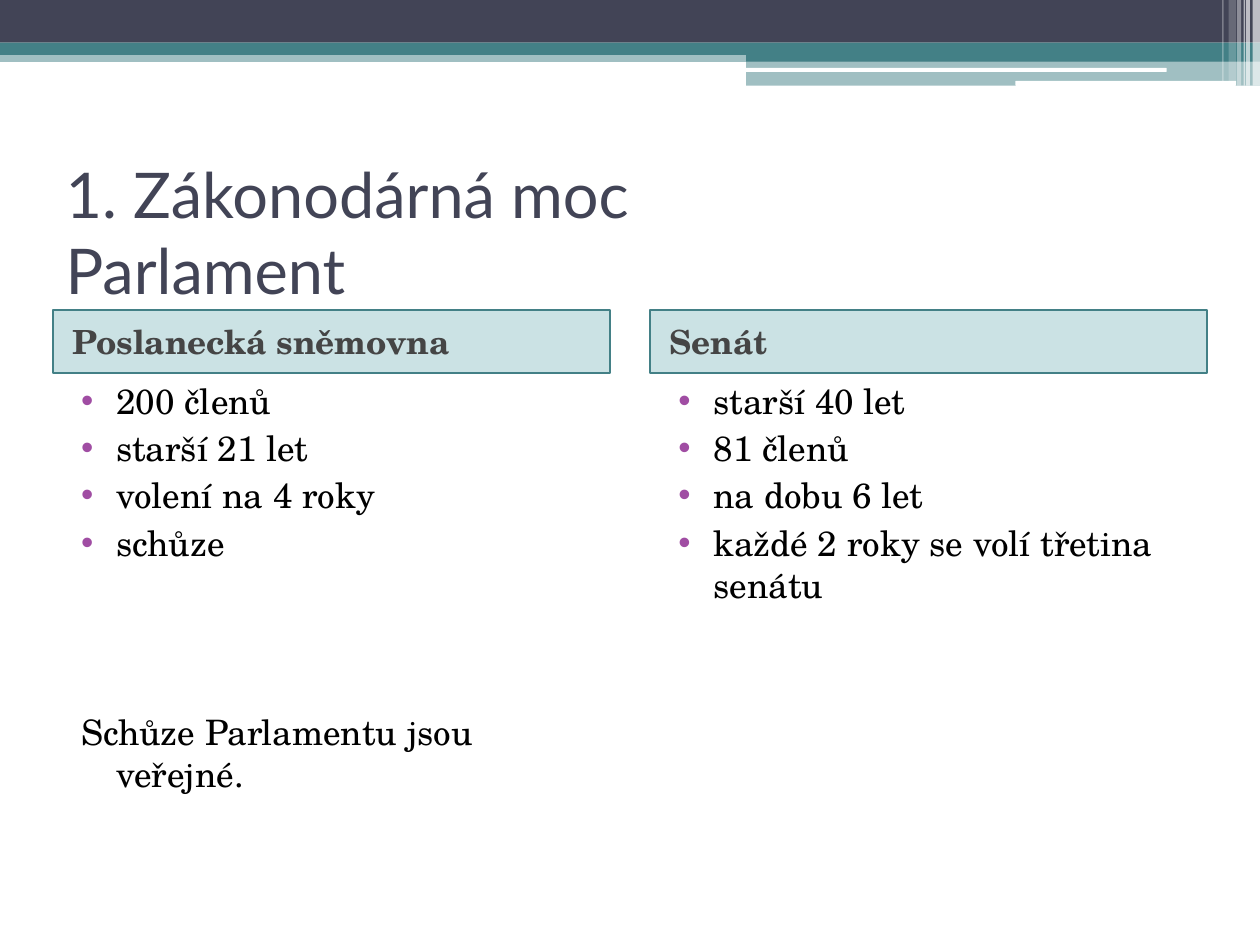
from lxml.etree import SubElement
from pptx import Presentation
from pptx.dml.color import RGBColor
from pptx.enum.shapes import MSO_SHAPE as Shape
from pptx.enum.text import MSO_ANCHOR as Anchor, MSO_AUTO_SIZE as AutoSize, PP_ALIGN as Align
from pptx.oxml.ns import qn
from pptx.util import Cm, Pt

DARK, TEAL, WHITE = "424456", "438086", "FFFFFF"
SERIF = "TeX Gyre Schola"
SLIDE_W = 25.4
COL_W, HEAD_TOP, HEAD_H, LIST_H = 11.23, 6.25, 1.27, 10.8

# left, top, width, height, colour, opacity in percent
BANDS = [
    (0, 1.02, SLIDE_W, 0.23, TEAL, 50),
    (0, 0, SLIDE_W, 0.86, DARK, 100),
    (0, 0.86, SLIDE_W, 0.25, TEAL, 100),
    (15.04, 0.99, 10.36, 0.25, TEAL, 100),
    (15.04, 1.22, 10.36, 0.51, TEAL, 50),
]
ROUNDED = [
    (15.01, 1.37, 8.51, 0.08, WHITE, 100),
    (20.47, 1.63, 4.45, 0.1, WHITE, 100),
]
# left, width, height, opacity of the upright white stripes
STRIPES = [
    (25.25, 0.15, 1.73, 65),
    (25.12, 0.08, 1.73, 65),
    (25.07, 0.03, 1.73, 60),
    (24.94, 0.08, 1.73, 40),
    (24.77, 0.15, 1.63, 20),
    (24.64, 0.03, 1.63, 30),
]
# left edge, heading, bulleted items, closing remark
COLUMNS = [
    (1.07, "Poslanecká sněmovna",
     ["200 členů", "starší 21 let", "volení na 4 roky", "schůze"],
     "Schůze Parlamentu jsou veřejné."),
    (13.11, "Senát",
     ["starší 40 let", "81 členů", "na dobu 6 let",
      "každé 2 roky se volí třetina senátu"], None),
]


def rgb(color):
    return RGBColor.from_string(color)


def set_fill(sp, color, opacity=100):
    sp.fill.solid()
    sp.fill.fore_color.rgb = rgb(color)
    if opacity < 100:
        clr = sp.fill._xPr.find(".//" + qn("a:srgbClr"))
        SubElement(clr, qn("a:alpha"), val=str(opacity * 1000))


def add_bar(slide, left, top, width, height, color, opacity, kind=Shape.RECTANGLE):
    sp = slide.shapes.add_shape(kind, Cm(left), Cm(top), Cm(width), Cm(height))
    sp.shadow.inherit = False
    sp.line.fill.background()
    set_fill(sp, color, opacity)


def place(sp, left, top, width, height, anchor):
    """Move a placeholder and return its text frame."""
    sp.left, sp.top, sp.width, sp.height = map(Cm, (left, top, width, height))
    tf = sp.text_frame
    tf.word_wrap = True
    tf.auto_size = AutoSize.NONE
    tf.vertical_anchor = anchor
    return tf


def write(p, text, size, color, font=SERIF, bold=False, before=3,
          margin=0, indent=0, bullet=None):
    p.text = text
    p.alignment = Align.LEFT
    p.space_before = Pt(before)
    for r in p.runs:
        r.font.name = font
        r.font.size = Pt(size)
        r.font.bold = bold
        r.font.color.rgb = rgb(color)
    pPr = p._p.get_or_add_pPr()
    pPr.set("marL", str(Cm(margin)))
    pPr.set("indent", str(Cm(indent)))
    if bullet:
        clr = SubElement(pPr, qn("a:buClr"))
        SubElement(clr, qn("a:srgbClr"), val=bullet)
        SubElement(pPr, qn("a:buChar"), char="•")
    else:
        SubElement(pPr, qn("a:buNone"))


def add_heading(sp, left, text):
    tf = place(sp, left, HEAD_TOP, COL_W, HEAD_H, Anchor.MIDDLE)
    set_fill(sp, "328E97", 25)
    sp.line.color.rgb = rgb(TEAL)
    sp.line.width = Pt(1)
    write(tf.paragraphs[0], text, 19, "454545", bold=True, margin=0.13)


def add_list(sp, left, items, remark):
    tf = place(sp, left, HEAD_TOP + HEAD_H, COL_W, LIST_H, Anchor.TOP)
    hanging = {"size": 20, "color": "000000", "margin": 1.02, "indent": -0.71}
    for i, item in enumerate(items):
        p = tf.add_paragraph() if i else tf.paragraphs[0]
        write(p, item, bullet="A04DA3", **hanging)
    if remark:
        write(tf.add_paragraph(), remark, before=84, **hanging)


def main():
    prs = Presentation()
    prs.slide_width, prs.slide_height = Cm(SLIDE_W), Cm(19.05)
    slide = prs.slides.add_slide(prs.slide_layouts.get_by_name("Comparison"))

    # Top decoration
    for band in BANDS:
        add_bar(slide, *band)
    for bar in ROUNDED:
        add_bar(slide, *bar, kind=Shape.ROUNDED_RECTANGLE)
    for left, width, height, opacity in STRIPES:
        add_bar(slide, left, 0, width, height, WHITE, opacity)

    # Title
    title, *bodies = slide.placeholders
    tf = place(title, 1.07, 3.18, 23.29, 2.97, Anchor.MIDDLE)
    write(tf.paragraphs[0], "1. Zákonodárná moc\vParlament", 36, DARK,
          font="Lato", before=0)

    # Two columns, each a heading over a list
    for (left, heading, items, remark), head, body in zip(COLUMNS, bodies[::2], bodies[1::2]):
        add_heading(head, left, heading)
        add_list(body, left, items, remark)

    prs.save("out.pptx")


if __name__ == "__main__":
    main()
